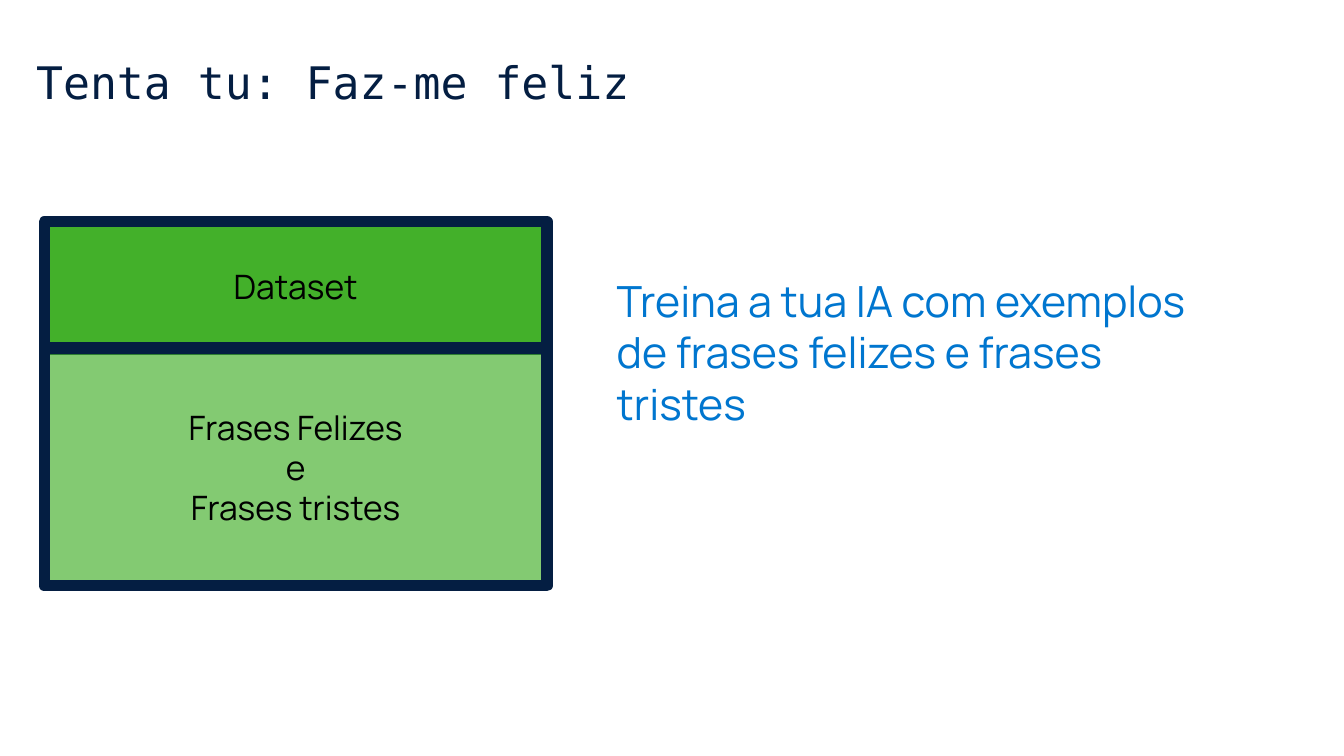
from dataclasses import dataclass

from lxml import etree
from pptx import Presentation
from pptx.dml.color import RGBColor
from pptx.enum.shapes import MSO_SHAPE
from pptx.enum.text import MSO_ANCHOR, PP_ALIGN
from pptx.oxml.ns import qn
from pptx.util import Inches, Pt

RECTANGLE = MSO_SHAPE.RECTANGLE
TOP, MIDDLE = MSO_ANCHOR.TOP, MSO_ANCHOR.MIDDLE
LEFT, CENTER = PP_ALIGN.LEFT, PP_ALIGN.CENTER

NAVY = "041E42"
GREEN = "43B02A"
BLUE = "0076CF"
BLACK = "000000"
BODY_FONT = "Manrope"
TITLE_FONT = "DejaVu Sans Mono"
CARD_LEFT, CARD_WIDTH = 0.33, 3.74


@dataclass
class Panel:
    text: str
    top: float
    height: float
    opacity: int


def color(hex_value: str) -> RGBColor:
    return RGBColor.from_string(hex_value)


def write_text(shape, text: str, *, size: float, font: str, ink: str,
               align=LEFT, anchor=TOP) -> None:
    frame = shape.text_frame
    frame.word_wrap = True
    frame.vertical_anchor = anchor
    frame.margin_left = frame.margin_right = Inches(0.1)
    frame.margin_top = frame.margin_bottom = Inches(0.1)
    for index, line in enumerate(text.split("\n")):
        para = frame.add_paragraph() if index else frame.paragraphs[0]
        para.alignment = align
        span = para.add_run()
        span.text = line
        span.font.size = Pt(size)
        span.font.name = font
        span.font.color.rgb = color(ink)


def add_text(page, text: str, left: float, top: float, width: float,
             height: float, **style) -> None:
    box = page.shapes.add_textbox(Inches(left), Inches(top),
                                  Inches(width), Inches(height))
    write_text(box, text, **style)


def add_panel(page, panel: Panel) -> None:
    shape = page.shapes.add_shape(RECTANGLE, Inches(CARD_LEFT), Inches(panel.top),
                                  Inches(CARD_WIDTH), Inches(panel.height))
    shape.shadow.inherit = False
    shape.fill.solid()
    shape.fill.fore_color.rgb = color(GREEN)
    if panel.opacity < 100:
        fill = shape.element.spPr.find(qn("a:solidFill"))
        alpha = etree.SubElement(fill[0], qn("a:alpha"))
        alpha.set("val", str(panel.opacity * 1000))
    shape.line.color.rgb = color(NAVY)
    shape.line.width = Pt(6)
    etree.SubElement(shape.element.spPr.find(qn("a:ln")), qn("a:round"))
    write_text(shape, panel.text, size=18, font=BODY_FONT, ink=BLACK,
               align=CENTER, anchor=MIDDLE)


def main() -> None:
    deck = Presentation()
    deck.slide_width = Inches(10)
    deck.slide_height = deck.slide_width * 9 // 16
    page = deck.slides.add_slide(deck.slide_layouts[6])

    add_text(page, "Tenta tu: Faz-me feliz", 0.17, 0.31, 9.72, 0.7,
             size=24, font=TITLE_FONT, ink=NAVY)
    for panel in (
        Panel("Dataset", 1.65, 0.95, 100),
        Panel("Frases Felizes\ne\nFrases tristes", 2.59, 1.77, 66),
    ):
        add_panel(page, panel)
    add_text(page, "Treina a tua IA com exemplos de frases felizes e frases tristes",
             4.49, 1.94, 4.51, 1.75, size=23, font=BODY_FONT, ink=BLUE)

    deck.save("out.pptx")


if __name__ == "__main__":
    main()
